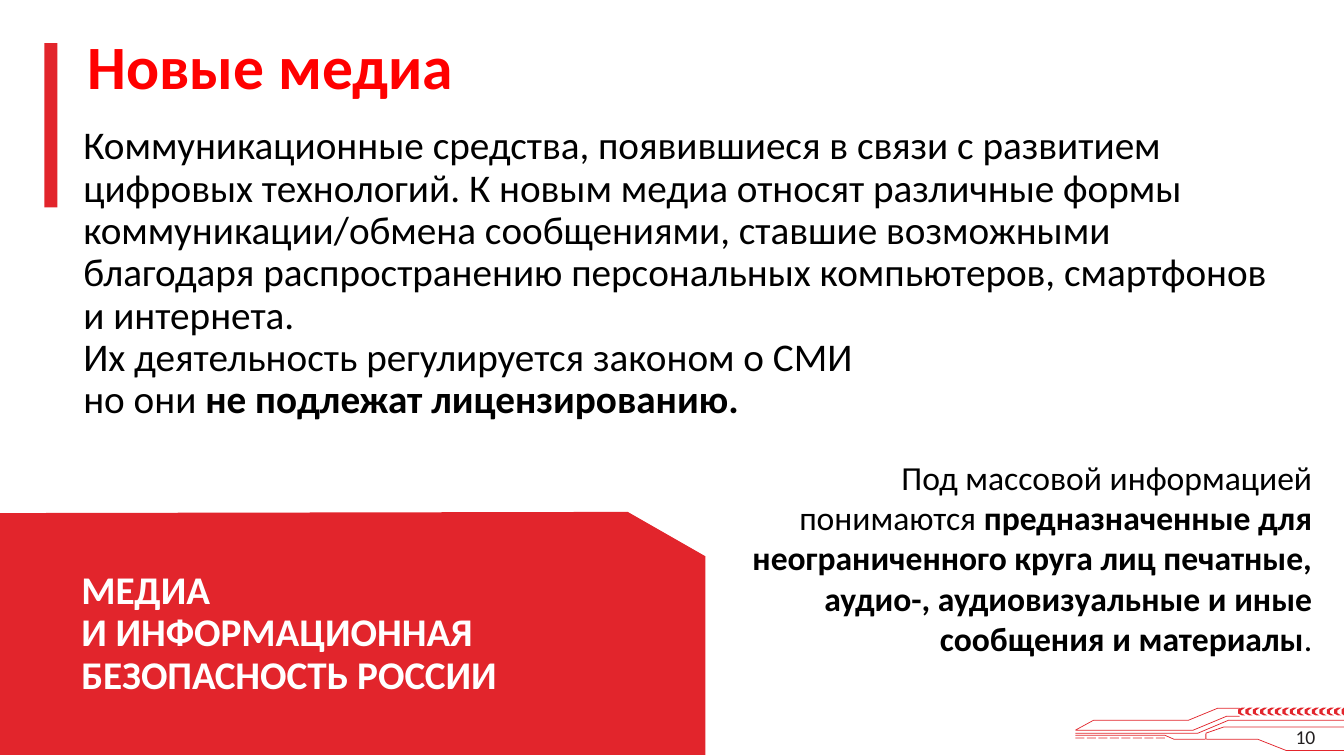
from dataclasses import dataclass

from pptx import Presentation
from pptx.dml.color import RGBColor
from pptx.enum.shapes import MSO_SHAPE
from pptx.enum.text import MSO_ANCHOR, PP_ALIGN
from pptx.util import Cm, Pt


@dataclass(frozen=True)
class Theme:
    font: str = "Calibri"
    red: RGBColor = RGBColor(0xE2, 0x25, 0x2C)
    title_red: RGBColor = RGBColor(0xFF, 0x00, 0x00)
    black: RGBColor = RGBColor(0x00, 0x00, 0x00)
    number_gray: RGBColor = RGBColor(0x23, 0x1F, 0x20)
    white: RGBColor = RGBColor(0xFF, 0xFF, 0xFF)
    title_size: Pt = Pt(44)
    body_size: Pt = Pt(28)
    note_size: Pt = Pt(24)
    number_size: Pt = Pt(14)


theme = Theme()
presentation = Presentation()
presentation.slide_width = Cm(33.87)
presentation.slide_height = Cm(19.05)
slide = presentation.slides.add_slide(presentation.slide_layouts[6])


def add_red_outline(contours):
    """Draw closed contours, given in centimetres, as one red shape."""
    contours = [[(Cm(x), Cm(y)) for x, y in contour] for contour in contours]
    builder = slide.shapes.build_freeform(*contours[0][0])
    for contour in contours:
        if contour is not contours[0]:
            builder.move_to(*contour[0])
        builder.add_line_segments(contour[1:], close=True)
    shape = builder.convert_to_shape()
    shape.shadow.inherit = False
    shape.fill.solid()
    shape.fill.fore_color.rgb = theme.red
    shape.line.fill.background()


def add_text(box, paragraphs, size, color, align=PP_ALIGN.LEFT,
             anchor=MSO_ANCHOR.TOP, line_spacing=None, inset=True):
    """Add a text box; each paragraph is a list of (text, bold) pieces."""
    text_frame = slide.shapes.add_textbox(*map(Cm, box)).text_frame
    text_frame.word_wrap = True
    text_frame.vertical_anchor = anchor
    if not inset:
        text_frame.margin_left = text_frame.margin_right = Cm(0)
        text_frame.margin_top = text_frame.margin_bottom = Cm(0)
    for index, pieces in enumerate(paragraphs):
        paragraph = text_frame.add_paragraph() if index else text_frame.paragraphs[0]
        paragraph.alignment = align
        paragraph.line_spacing = line_spacing
        for position, (text, bold) in enumerate(pieces):
            first_run = len(paragraph.runs)
            if position:
                paragraph.add_run().text = text
            else:
                paragraph.text = text
            for run in paragraph.runs[first_run:]:
                run.font.name = theme.font
                run.font.size = size
                run.font.bold = bold
                run.font.color.rgb = color


# Circuit ornament: thin rails, a dashed rail and a row of chevrons
rail_thickness = 0.02
rails = [
    [(31.24, 17.84), (30.68, 17.84), (29.95, 18.14), (27.56, 18.14), (27.1, 18.39)],
    [(27.1, 18.39), (30.07, 18.39), (30.91, 18.04), (31.24, 18.04)],
    [(33.87, 18.14), (30.96, 18.14), (30.18, 18.47), (27.1, 18.47)],
    [(27.1, 18.52), (29.36, 18.52), (29.59, 18.62), (31.7, 18.62),
     (32.41, 18.9), (33.87, 18.9)],
    [(33.87, 18.31), (30.84, 18.31), (30.38, 18.47)],
]
rails += [[(27.1 + 0.29 * i, 18.59), (27.33 + 0.29 * i, 18.59)] for i in range(8)]
circuit = [
    rail + [(x, y + rail_thickness) for x, y in reversed(rail)] for rail in rails
]
circuit.append([(30.38, 18.47), (30.4, 18.47), (30.4, 18.64), (30.38, 18.64)])

chevron = [(0.18, 17.83), (0.1, 17.83), (0, 17.88), (0, 17.98),
           (0.1, 18.03), (0.18, 18.03), (0.08, 17.97), (0.08, 17.9)]
chevron_pitch = 2.61 / 14
for i in range(15):
    left = 31.2 + chevron_pitch * i
    circuit.append([(min(left + x, 33.87), y) for x, y in chevron])
add_red_outline(circuit)

# Red panel with a cut corner
add_red_outline([[(0, 12.93), (0, 19.02), (17.78, 19.02), (17.78, 14.02), (15.82, 12.9)]])

# Accent bar beside the title
accent_bar = slide.shapes.add_shape(
    MSO_SHAPE.RECTANGLE, Cm(1.12), Cm(1.09), Cm(0.33), Cm(4.14))
accent_bar.shadow.inherit = False
accent_bar.fill.solid()
accent_bar.fill.fore_color.rgb = theme.red
accent_bar.line.fill.background()

# Slide number
add_text((31.75, 18.26, 1.4, 0.61), [[("10", False)]], theme.number_size,
         theme.number_gray, PP_ALIGN.RIGHT, MSO_ANCHOR.MIDDLE, inset=False)

# Title and definition
add_text((2.21, 0.71, 23.39, 1.9), [[("Новые медиа", True)]],
         theme.title_size, theme.title_red, inset=False)
add_text(
    (1.85, 5.54, 30.53, 2.74),
    [
        [("Коммуникационные средства, появившиеся в связи с развитием цифровых "
          "технологий. К новым медиа относят различные формы коммуникации/обмена "
          "сообщениями, ставшие возможными благодаря распространению персональных "
          "компьютеров, смартфонов и интернета.", False)],
        [("Их деятельность регулируется законом о СМИ\vно они ", False),
         ("не подлежат лицензированию.", True)],
    ],
    theme.body_size, theme.black, anchor=MSO_ANCHOR.MIDDLE, line_spacing=0.9)

# Note on mass information
add_text(
    (18.16, 11.38, 15.16, 6.4),
    [[("Под массовой информацией понимаются ", False),
      ("предназначенные для неограниченного круга лиц печатные, аудио-, "
       "аудиовизуальные и иные сообщения и материалы", True),
      (".", False)]],
    theme.note_size, theme.black, PP_ALIGN.RIGHT)

# Section name on the red panel
add_text((1.8, 14.61, 15.32, 2.74),
         [[("МЕДИА\vИ ИНФОРМАЦИОННАЯ БЕЗОПАСНОСТЬ РОССИИ", True)]],
         theme.body_size, theme.white, anchor=MSO_ANCHOR.MIDDLE, line_spacing=0.9)

presentation.save("out.pptx")
